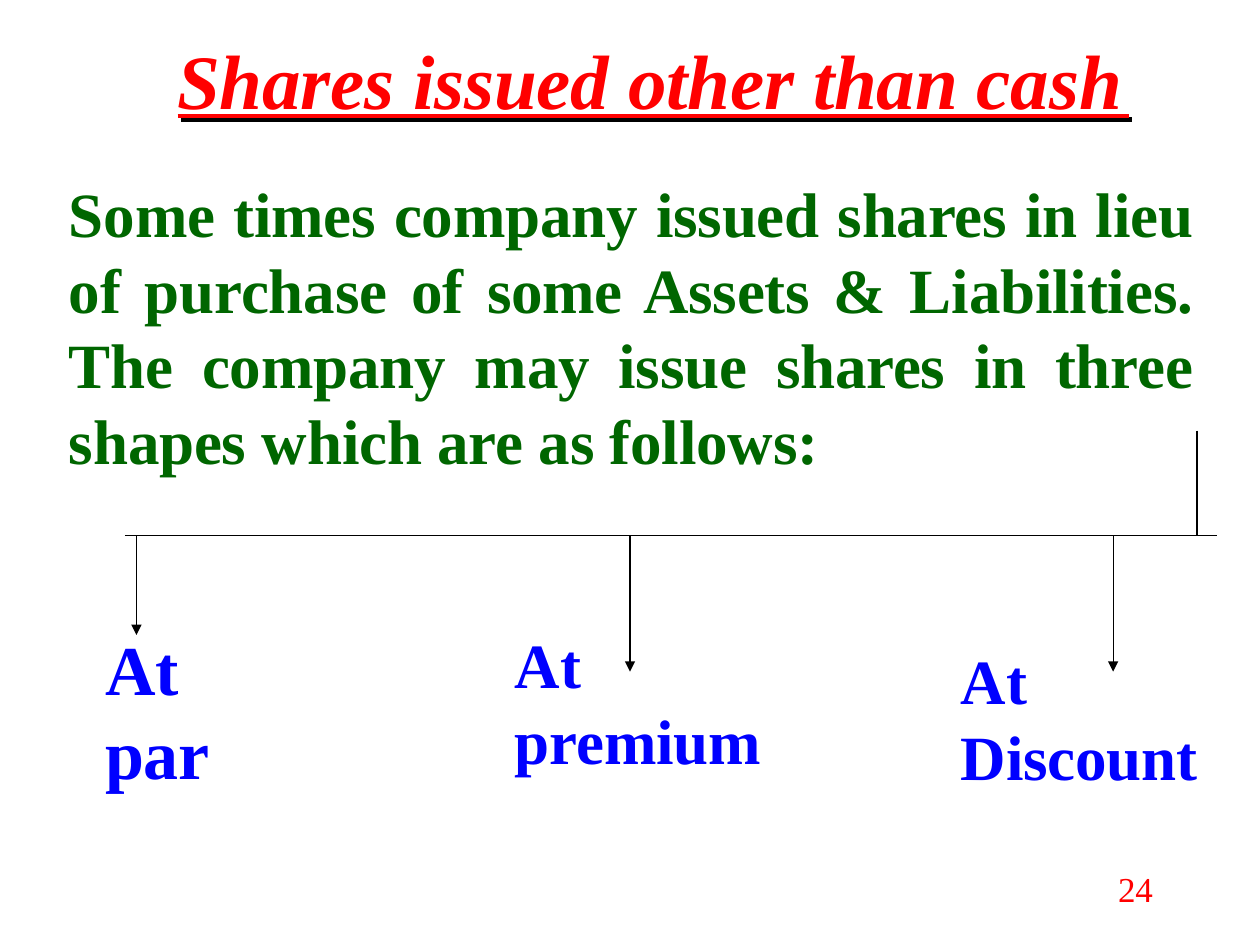
import pptx
import pptx.dml.color
import pptx.enum.shapes
import pptx.enum.text
import pptx.oxml.ns
import pptx.util
from lxml import etree

Cm = pptx.util.Cm
Pt = pptx.util.Pt
RGBColor = pptx.dml.color.RGBColor
PP_ALIGN = pptx.enum.text.PP_ALIGN

BLACK = RGBColor(0x00, 0x00, 0x00)
RED = RGBColor(0xFF, 0x00, 0x00)
GREEN = RGBColor(0x00, 0x66, 0x00)
BLUE = RGBColor(0x00, 0x00, 0xFF)


class SlideWriter:
    font_name = "Times New Roman"
    inset = Cm(0.04)
    letter_spacing = "-10"

    def __init__(self, slide):
        self.slide = slide

    def text(self, words, left, top, width, height, size, color,
             bold=True, italic=False, align=PP_ALIGN.LEFT):
        box = self.slide.shapes.add_textbox(Cm(left), Cm(top), Cm(width), Cm(height))
        frame = box.text_frame
        frame.word_wrap = True
        frame.margin_right = frame.margin_bottom = 0
        frame.margin_left = frame.margin_top = self.inset
        paragraph = frame.paragraphs[0]
        paragraph.alignment = align
        run = paragraph.add_run()
        run.text = words
        run.font.name = self.font_name
        run.font.size = Pt(size)
        run.font.bold = bold
        run.font.italic = italic
        run.font.color.rgb = color
        run._r.get_or_add_rPr().set("spc", self.letter_spacing)

    def line(self, x1, y1, x2, y2, weight=0.75, color=BLACK, arrow=False):
        connector = self.slide.shapes.add_connector(
            pptx.enum.shapes.MSO_CONNECTOR.STRAIGHT, Cm(x1), Cm(y1), Cm(x2), Cm(y2))
        connector.line.width = Pt(weight)
        connector.line.color.rgb = color
        properties = connector.element.spPr
        etree.SubElement(properties, pptx.oxml.ns.qn("a:effectLst"))
        if arrow:
            outline = properties.find(pptx.oxml.ns.qn("a:ln"))
            etree.SubElement(outline, pptx.oxml.ns.qn("a:tailEnd"), type="triangle")

    def strokes(self, segments, weight=0.75, color=BLACK):
        (first_x, first_y), _ = segments[0]
        builder = self.slide.shapes.build_freeform(Cm(first_x), Cm(first_y))
        for index, (start, end) in enumerate(segments):
            if index:
                builder.move_to(Cm(start[0]), Cm(start[1]))
            builder.add_line_segments([(Cm(end[0]), Cm(end[1]))], close=False)
        outline = builder.convert_to_shape()
        outline.shadow.inherit = False
        outline.fill.background()
        outline.line.width = Pt(weight)
        outline.line.color.rgb = color


def main():
    deck = pptx.Presentation()
    deck.slide_width = Cm(25.4)
    deck.slide_height = Cm(19.05)
    writer = SlideWriter(deck.slides.add_slide(deck.slide_layouts[6]))

    writer.text("24", 22.5, 17.45, 0.95, 0.9, 20, RED, bold=False)

    writer.line(3.64, 2.41, 22.83, 2.41, weight=2.4)
    writer.text("Shares issued other than cash", 3.53, 0.61, 19.6, 1.93, 44, RED, italic=True)
    writer.line(3.58, 2.34, 22.76, 2.34, weight=2.4, color=RED)

    writer.text(
        "Some times company issued shares in lieu of purchase of some Assets & "
        "Liabilities. The company may issue shares in three shapes which are as follows:",
        1.35, 3.48, 22.7, 6.17, 36, GREEN, align=PP_ALIGN.JUSTIFY)

    bar_y = 10.8
    writer.strokes([
        ((24.13, 8.68), (24.13, bar_y)),
        ((2.52, bar_y), (24.54, bar_y)),
    ])

    branches = [
        (2.75, 12.8, 2.08, 12.57, 40, ("At", "par")),
        (12.7, 13.54, 10.34, 12.57, 36, ("At", "premium")),
        (22.44, 13.54, 19.33, 12.9, 36, ("At", "Discount")),
    ]
    for arrow_x, tip_y, left, top, size, words in branches:
        writer.line(arrow_x, bar_y, arrow_x, tip_y, arrow=True)
        row_pitch = size * 0.0425
        for row, word in enumerate(words):
            writer.text(word, left, top + row * row_pitch, 5.3, row_pitch, size, BLUE)

    deck.save("out.pptx")


if __name__ == "__main__":
    main()
